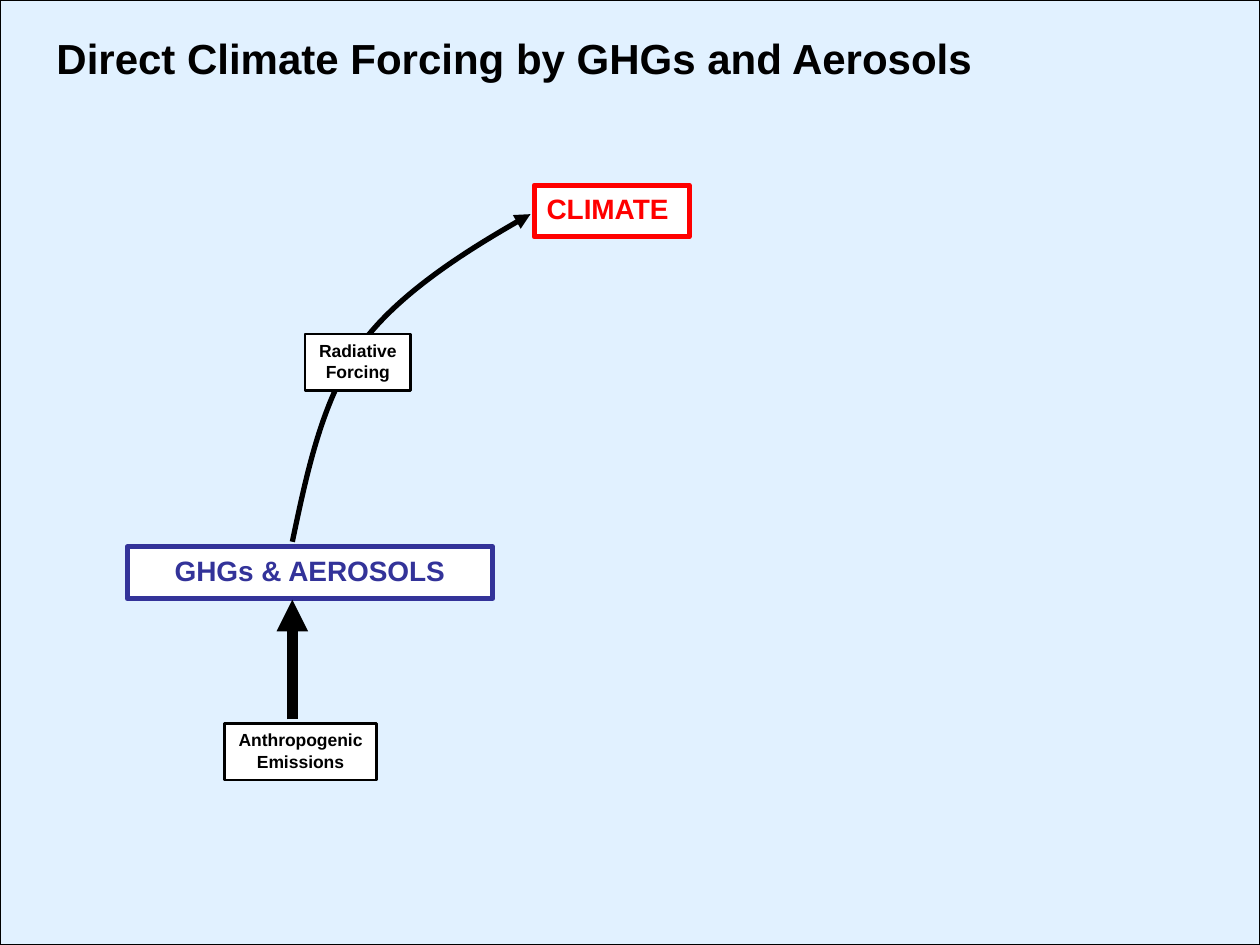
from lxml import etree
from pptx import Presentation
from pptx.dml.color import RGBColor
from pptx.enum import shapes, text
from pptx.oxml.ns import qn
from pptx.util import Inches, Pt

BLACK = RGBColor(0x00, 0x00, 0x00)
WHITE = RGBColor(0xFF, 0xFF, 0xFF)
SKY = RGBColor(0xE1, 0xF1, 0xFF)
RED = RGBColor(0xFF, 0x00, 0x00)
BLUE = RGBColor(0x33, 0x33, 0x99)
FONT = "Arial"
LEFT, CENTER = text.PP_ALIGN.LEFT, text.PP_ALIGN.CENTER

# Content: text, (left, top, width, height), size, colour, line width, alignment
TITLE = ("Direct Climate Forcing by GHGs and Aerosols", (0.35, 0.21, 7.57, 0.5))
BOXES = [
    ("GHGs & AEROSOLS", (1.01, 4.34, 2.9, 0.41), 16, BLUE, 3, CENTER),
    ("CLIMATE", (4.24, 1.47, 1.23, 0.41), 16, RED, 3, LEFT),
    ("Anthropogenic\nEmissions", (1.78, 5.74, 1.21, 0.45), 10, BLACK, 1.5, CENTER),
    ("Radiative\nForcing", (2.42, 2.65, 0.84, 0.45), 10, BLACK, 1.5, CENTER),
]
EMISSION_ARROW = [(2.32, 5.71), (2.32, 4.76)]
# Start point, then two control points and an end point per Bezier segment
FORCING_CURVE = [(2.32, 4.3), (2.44, 3.73), (2.56, 3.16), (2.87, 2.73),
                 (3.19, 2.29), (4.01, 1.81), (4.21, 1.7)]


def inches(values):
    return [Inches(v) for v in values]


def write(sp, words, size, color, align):
    tf = sp.text_frame
    tf.text = words
    tf.word_wrap = align == LEFT
    tf.vertical_anchor = text.MSO_ANCHOR.TOP
    for p in tf.paragraphs:
        p.alignment = align
        for r in p.runs:
            r.font.name, r.font.size, r.font.bold = FONT, Pt(size), True
            r.font.color.rgb = color


def add_rect(s, place, fill, line, width):
    sp = s.shapes.add_shape(shapes.MSO_SHAPE.RECTANGLE, *inches(place))
    sp.shadow.inherit = False
    sp.fill.solid()
    sp.fill.fore_color.rgb = fill
    sp.line.color.rgb, sp.line.width = line, Pt(width)
    return sp


def add_box(s, words, place, size, color, width, align):
    write(add_rect(s, place, WHITE, color, width), words, size, color, align)


def style_arrow(sp, width):
    sp.line.color.rgb, sp.line.width = BLACK, Pt(width)
    etree.SubElement(sp.line._get_or_add_ln(), qn("a:tailEnd"), type="triangle")


def add_curve(s, points, width):
    start, *rest = [tuple(inches(pt)) for pt in points]
    builder = s.shapes.build_freeform(*start)
    builder.add_line_segments(rest, close=False)
    sp = builder.convert_to_shape()
    # Regroup every three line points as one cubic Bezier segment
    lines = list(sp._element.iter(qn("a:lnTo")))
    outline = lines[0].getparent()
    for i in range(0, len(lines), 3):
        curve = etree.SubElement(outline, qn("a:cubicBezTo"))
        for line in lines[i:i + 3]:
            curve.append(line[0])
            outline.remove(line)
    sp.shadow.inherit = False
    sp.fill.background()
    style_arrow(sp, width)


prs = Presentation()
prs.slide_width, prs.slide_height = Inches(10), Inches(7.5)
s = prs.slides.add_slide(prs.slide_layouts[6])

# Background panel
add_rect(s, (0, 0, 10, 7.5), SKY, BLACK, 0.75)

# Source and climate boxes
for box in BOXES[:-1]:
    add_box(s, *box)

# Emissions arrow
start, end = EMISSION_ARROW
arrow = s.shapes.add_connector(shapes.MSO_CONNECTOR.STRAIGHT, *inches(start + end))
style_arrow(arrow, 6)
etree.SubElement(arrow._element.spPr, qn("a:effectLst"))

# Title
words, place = TITLE
write(s.shapes.add_textbox(*inches(place)), words, 24, BLACK, LEFT)

# Forcing curve, with its label on top
add_curve(s, FORCING_CURVE, 3)
add_box(s, *BOXES[-1])

prs.save("out.pptx")
